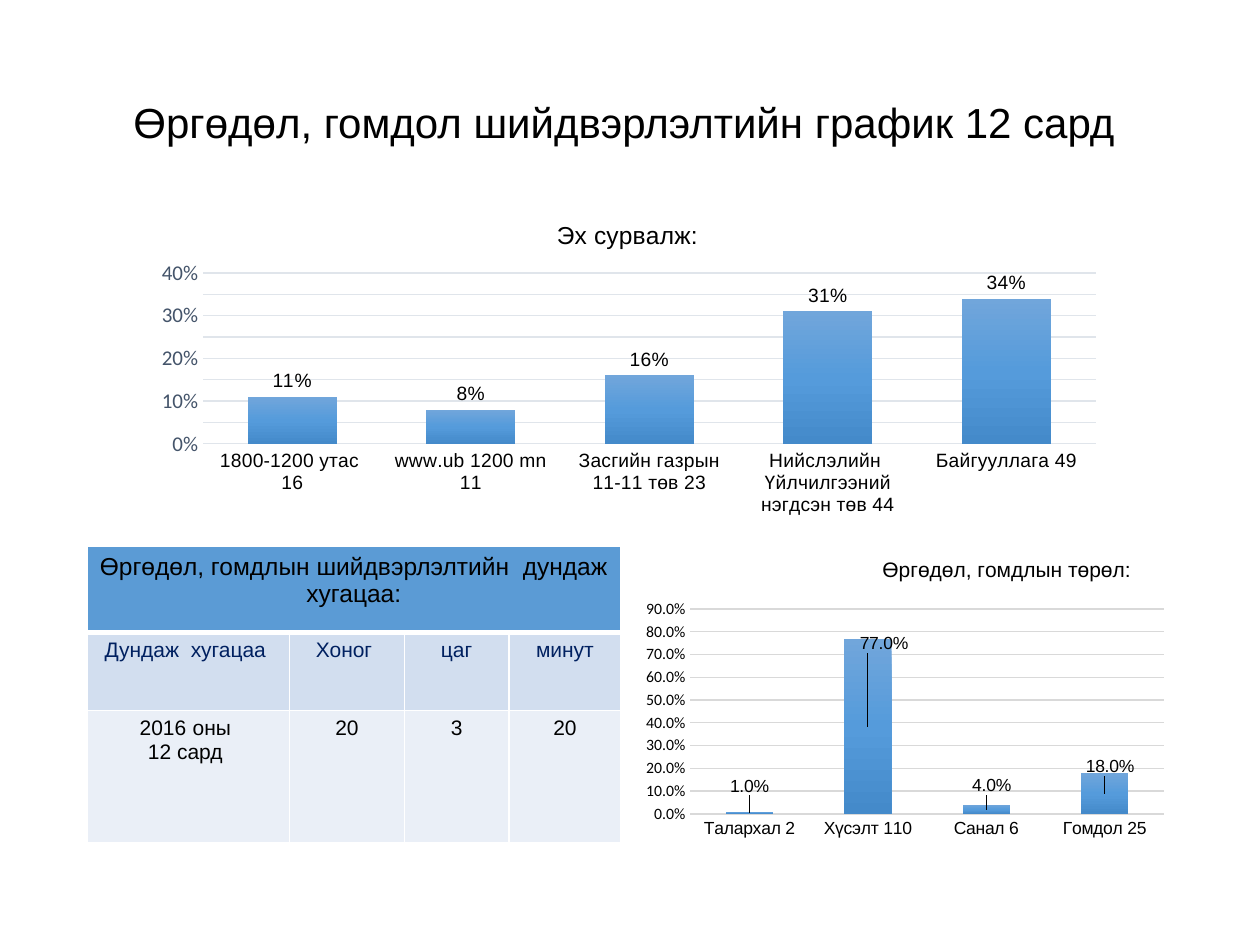
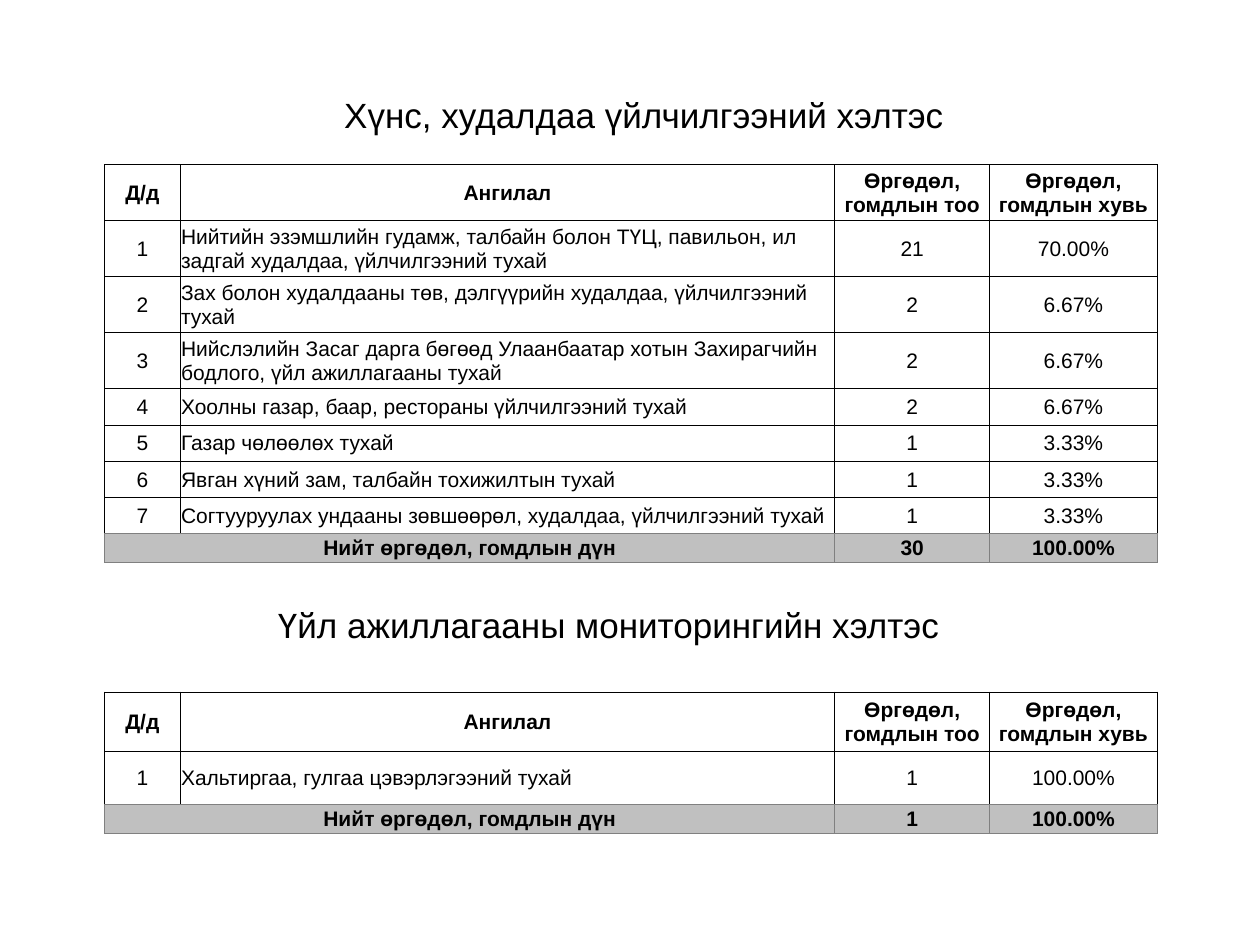
from copy import deepcopy

from lxml.etree import SubElement
from pptx import Presentation
from pptx.chart.data import CategoryChartData
from pptx.dml.color import RGBColor
from pptx.enum.chart import XL_CHART_TYPE as ChartType
from pptx.enum.chart import XL_LABEL_POSITION as LabelPosition
from pptx.enum.chart import XL_TICK_MARK as TickMark
from pptx.enum.text import MSO_ANCHOR as Anchor
from pptx.enum.text import PP_ALIGN as Align
from pptx.oxml.ns import qn
from pptx.util import Cm, Pt

BLACK = RGBColor(0x00, 0x00, 0x00)
WHITE = RGBColor(0xFF, 0xFF, 0xFF)
NAVY = RGBColor(0x00, 0x20, 0x60)
SLATE = RGBColor(0x44, 0x54, 0x6A)
BLUE = RGBColor(0x5B, 0x9B, 0xD5)
PALE_BLUE = RGBColor(0xD2, 0xDE, 0xEF)
ICE_BLUE = RGBColor(0xEA, 0xEF, 0xF7)
SILVER = RGBColor(0xC0, 0xC0, 0xC0)
GRAY = RGBColor(0x80, 0x80, 0x80)
GRID_GRAY = RGBColor(0xD9, 0xD9, 0xD9)
GRID_BLUE = RGBColor(0xE0, 0xE5, 0xEB)
BAR_TOP = RGBColor(0x71, 0xA6, 0xDB)
BAR_MIDDLE = RGBColor(0x55, 0x9B, 0xDB)
BAR_BOTTOM = RGBColor(0x44, 0x8A, 0xCA)

TEXT_FONT = "Arial"
NUMBER_FONT = "Calibri"

DEPARTMENT_COLUMNS = [1.52, 13.2, 3.12, 3.38]
DEPARTMENT_HEADER = ["Д/д", "Ангилал", "Өргөдөл, гомдлын тоо", "Өргөдөл, гомдлын хувь"]
TOTAL_LABEL = "Нийт өргөдөл, гомдлын дүн"


def set_font(font, size, color=BLACK, name=TEXT_FONT, bold=False):
    font.name, font.size, font.bold = name, Pt(size), bold
    font.color.rgb = color


def place(parent, index, edge=True, inner=False, **fractions):
    for old_layout in parent.findall(qn("c:layout")):
        parent.remove(old_layout)
    layout = SubElement(parent, qn("c:layout"))
    parent.insert(index, layout)
    manual = SubElement(layout, qn("c:manualLayout"))
    settings = {"layoutTarget": "inner"} if inner else {}
    if edge:
        settings.update(xMode="edge", yMode="edge")
    settings.update(fractions)
    for name, value in settings.items():
        SubElement(manual, qn(f"c:{name}")).set("val", str(value))


def set_borders(cell, color, width=0.5, **edges):
    properties = cell._tc.get_or_add_tcPr()
    for edge in "LRTB":
        edge_color, edge_width = edges.get(edge, (color, width))
        line = SubElement(properties, qn(f"a:ln{edge}"), w=str(Pt(edge_width)))
        fill = SubElement(line, qn("a:solidFill"))
        SubElement(fill, qn("a:srgbClr"), val=str(edge_color))


class DeckBuilder:
    def __init__(self):
        self.deck = Presentation()
        self.deck.slide_width, self.deck.slide_height = Cm(25.4), Cm(19.05)
        self.page = None

    def add_page(self):
        self.page = self.deck.slides.add_slide(self.deck.slide_layouts[6])

    def add_title(self, text, left, top, height, size):
        box = self.page.shapes.add_textbox(Cm(left), Cm(top), Cm(21.9), Cm(height))
        frame = box.text_frame
        frame.word_wrap = True
        frame.vertical_anchor = Anchor.MIDDLE
        para = frame.paragraphs[0]
        para.text = text
        para.alignment = Align.CENTER
        para.line_spacing = 0.9
        set_font(para.font, size)

    def add_table(self, left, top, columns, rows):
        frame = self.page.shapes.add_table(
            len(rows), len(columns), Cm(left), Cm(top), Cm(sum(columns)), Cm(sum(rows))
        )
        table = frame.table
        table.first_row = table.horz_banding = False
        for column, width in zip(table.columns, columns):
            column.width = Cm(width)
        for row, height in zip(table.rows, rows):
            row.height = Cm(height)
        return table

    def fill_cell(self, cell, text, fill, size=12, color=BLACK, bold=False, align=Align.CENTER):
        cell.fill.solid()
        cell.fill.fore_color.rgb = fill
        cell.text = text
        for para in cell.text_frame.paragraphs:
            para.alignment = align
            set_font(para.font, size, color, bold=bold)

    def add_duration_table(self, left, top):
        table = self.add_table(left, top, [4.09, 2.31, 2.11, 2.26], [1.73, 1.57, 2.67])
        heading = "Өргөдөл, гомдлын шийдвэрлэлтийн  дундаж хугацаа:"
        rows = [
            ([heading, "", "", ""], BLUE, 14, BLACK),
            (["Дундаж  хугацаа ", "Хоног ", "цаг", "минут"], PALE_BLUE, 12, NAVY),
            ([" оны \n12 сард ", "20", "3", "20"], ICE_BLUE, 12, BLACK),
        ]
        thick = (WHITE, 3)
        edges = [{"B": thick}, {"T": thick}, {}]
        for row_index, (texts, fill, size, color) in enumerate(rows):
            for column_index, text in enumerate(texts):
                cell = table.cell(row_index, column_index)
                set_borders(cell, WHITE, 1, **edges[row_index])
                self.fill_cell(cell, text, fill, size, color)
        table.cell(0, 0).merge(table.cell(0, 3))
        year = table.cell(2, 0).text_frame.paragraphs[0]._p.get_or_add_pPr()
        year.set("marL", str(Cm(0.95)))
        year.set("indent", str(Cm(-0.95)))
        numbering = SubElement(year, qn("a:buAutoNum"), type="arabicPlain", startAt="2016")
        year.find(qn("a:defRPr")).addprevious(numbering)

    def add_department_table(self, top, heights, entries, total):
        table = self.add_table(2.11, top, DEPARTMENT_COLUMNS, heights)
        numbered = [[str(number), *entry] for number, entry in enumerate(entries, 1)]
        rows = [DEPARTMENT_HEADER, *numbered, [TOTAL_LABEL, "", *total]]
        last = len(rows) - 1
        for row_index, texts in enumerate(rows):
            is_total = row_index == last
            is_entry = 0 < row_index < last
            edges = {"B": (GRAY, 0.5)} if row_index == last - 1 else {}
            for column_index, text in enumerate(texts):
                cell = table.cell(row_index, column_index)
                set_borders(cell, GRAY if is_total else BLACK, **edges)
                cell.margin_left = cell.margin_right = cell.margin_top = Cm(0.02)
                cell.margin_bottom = 0
                cell.vertical_anchor = Anchor.MIDDLE
                self.fill_cell(
                    cell,
                    text,
                    SILVER if is_total else WHITE,
                    bold=not is_entry,
                    align=Align.LEFT if is_entry and column_index == 1 else Align.CENTER,
                )
        table.cell(last, 0).merge(table.cell(last, 1))

    def add_column_chart(self, kind, frame, values, number_format, title, title_size, title_place,
                         plot_place, gap, overlap, grid, category_size, axis_size, axis_color,
                         maximum):
        data = CategoryChartData(number_format=number_format)
        data.categories = list(values)
        data.add_series("Series 1", list(values.values()))
        chart = self.page.shapes.add_chart(kind, *map(Cm, frame), data).chart
        chart.has_legend = False
        set_font(chart.font, 10, name=NUMBER_FONT)

        chart.has_title = True
        chart.chart_title.include_in_layout = False
        para = chart.chart_title.text_frame.paragraphs[0]
        para.text = title
        set_font(para.font, title_size)
        place(chart.chart_title._element, 1, **title_place)
        place(chart._chartSpace.find(".//" + qn("c:plotArea")), 0, inner=True, **plot_place)

        category_axis, value_axis = chart.category_axis, chart.value_axis
        for axis in (category_axis, value_axis):
            axis.major_tick_mark = axis.minor_tick_mark = TickMark.NONE
        set_font(category_axis.tick_labels.font, category_size)
        category_axis.format.line.color.rgb = grid
        category_axis.format.line.width = Pt(0.75)
        set_font(value_axis.tick_labels.font, axis_size, axis_color, NUMBER_FONT)
        value_axis.tick_labels.number_format = number_format
        value_axis.tick_labels.number_format_is_linked = False
        value_axis.minimum_scale, value_axis.maximum_scale = 0, maximum
        value_axis.major_unit = 0.1
        value_axis.format.line.fill.background()
        value_axis.has_major_gridlines = True
        value_axis.major_gridlines.format.line.color.rgb = grid
        value_axis.major_gridlines.format.line.width = Pt(0.75)

        plot = chart.plots[0]
        plot.gap_width, plot.overlap, plot.vary_by_categories = gap, overlap, False
        self.paint_bars(plot.series[0])
        plot.has_data_labels = True
        labels = plot.data_labels
        labels.show_value = True
        labels.number_format, labels.number_format_is_linked = number_format, False
        set_font(labels.font, category_size)
        return chart

    def paint_bars(self, series):
        fill = series.format.fill
        fill.gradient()
        fill.gradient_angle = 270
        stops = series._element.find(".//" + qn("a:gsLst"))
        stops.insert(1, deepcopy(stops[0]))
        colors = [BAR_TOP, BAR_MIDDLE, BAR_BOTTOM]
        for stop, position, color in zip(fill.gradient_stops, [0, 0.5, 1], colors):
            stop.position = position
            stop.color.rgb = color

    def add_minor_gridlines(self, axis, unit):
        axis.minor_unit = unit
        axis.has_minor_gridlines = True
        major = axis._element.find(qn("c:majorGridlines"))
        axis._element.find(qn("c:minorGridlines")).append(deepcopy(major[0]))

    def shift_labels(self, series, offsets):
        for index, (across, down) in enumerate(offsets):
            label = series.points[index].data_label
            set_font(label.font, 10)
            label.position = LabelPosition.CENTER
        for element, (across, down) in zip(series._element.iter(qn("c:dLbl")), offsets):
            place(element, 1, edge=False, x=across, y=down)


def build_report_page(builder):
    builder.add_page()
    builder.add_title("Өргөдөл, гомдол шийдвэрлэлтийн график 12 сард ", 1.75, 1.35, 2.34, 24)
    builder.add_duration_table(1.75, 11.02)
    types = builder.add_column_chart(
        ChartType.COLUMN_STACKED, (12.83, 11.02, 10.85, 5.99),
        {"Талархал 2": 0.01, "Хүсэлт 110": 0.77, "Санал 6": 0.04, "Гомдол 25": 0.18},
        "0.0%", "Өргөдөл, гомдлын төрөл:", 12, {"x": 0.45, "y": 0.02},
        {"x": 0.1, "y": 0.21, "w": 0.88, "h": 0.69},
        150, 100, GRID_GRAY, 10, 9, BLACK, 0.9,
    )
    builder.shift_labels(
        types.plots[0].series[0], [(0, -0.09), (0.03, -0.28), (0.01, -0.08), (0.01, -0.09)]
    )
    sources = builder.add_column_chart(
        ChartType.COLUMN_CLUSTERED, (2.92, 4.01, 19.56, 6.5),
        {
            "1800-1200 утас  16": 0.11,
            "www.ub 1200 mn 11": 0.08,
            "Засгийн газрын 11-11 төв 23": 0.16,
            "Нийслэлийн  Үйлчилгээний нэгдсэн төв 44": 0.31,
            "Байгууллага 49": 0.34,
        },
        "0%", "Эх сурвалж:", 14, {"x": 0.42, "y": 0.05},
        {"x": 0.06, "y": 0.23, "w": 0.92, "h": 0.53},
        100, -24, GRID_BLUE, 11, 12, SLATE, 0.4,
    )
    sources.plots[0].data_labels.position = LabelPosition.OUTSIDE_END
    builder.add_minor_gridlines(sources.value_axis, 0.05)


def build_departments_page(builder):
    builder.add_page()
    builder.add_title("Үйл ажиллагааны мониторингийн хэлтэс ", 1.42, 12.04, 1.19, 20)
    trade = [
        ("Нийтийн эзэмшлийн гудамж, талбайн болон ТҮЦ, павильон, ил задгай худалдаа, "
         "үйлчилгээний тухай", "21", "70.00%"),
        ("Зах болон худалдааны төв, дэлгүүрийн худалдаа, үйлчилгээний тухай", "2", "6.67%"),
        ("Нийслэлийн Засаг дарга бөгөөд Улаанбаатар хотын Захирагчийн бодлого, "
         "үйл ажиллагааны тухай", "2", "6.67%"),
        ("Хоолны газар, баар, рестораны үйлчилгээний тухай", "2", "6.67%"),
        ("Газар чөлөөлөх тухай", "1", "3.33%"),
        ("Явган хүний зам, талбайн тохижилтын тухай", "1", "3.33%"),
        ("Согтууруулах ундааны зөвшөөрөл, худалдаа, үйлчилгээний тухай", "1", "3.33%"),
    ]
    builder.add_department_table(3.32, [1.13] * 4 + [0.73] * 4 + [0.58], trade, ["30", "100.00%"])
    builder.add_title("Хүнс, худалдаа үйлчилгээний хэлтэс ", 2.13, 1.4, 1.93, 20)
    monitoring = [("Хальтиргаа, гулгаа цэвэрлэгээний тухай", "1", "100.00%")]
    builder.add_department_table(13.95, [1.19, 1.07, 0.6], monitoring, ["1", "100.00%"])


def main():
    builder = DeckBuilder()
    build_report_page(builder)
    build_departments_page(builder)
    builder.deck.save("out.pptx")


if __name__ == "__main__":
    main()
